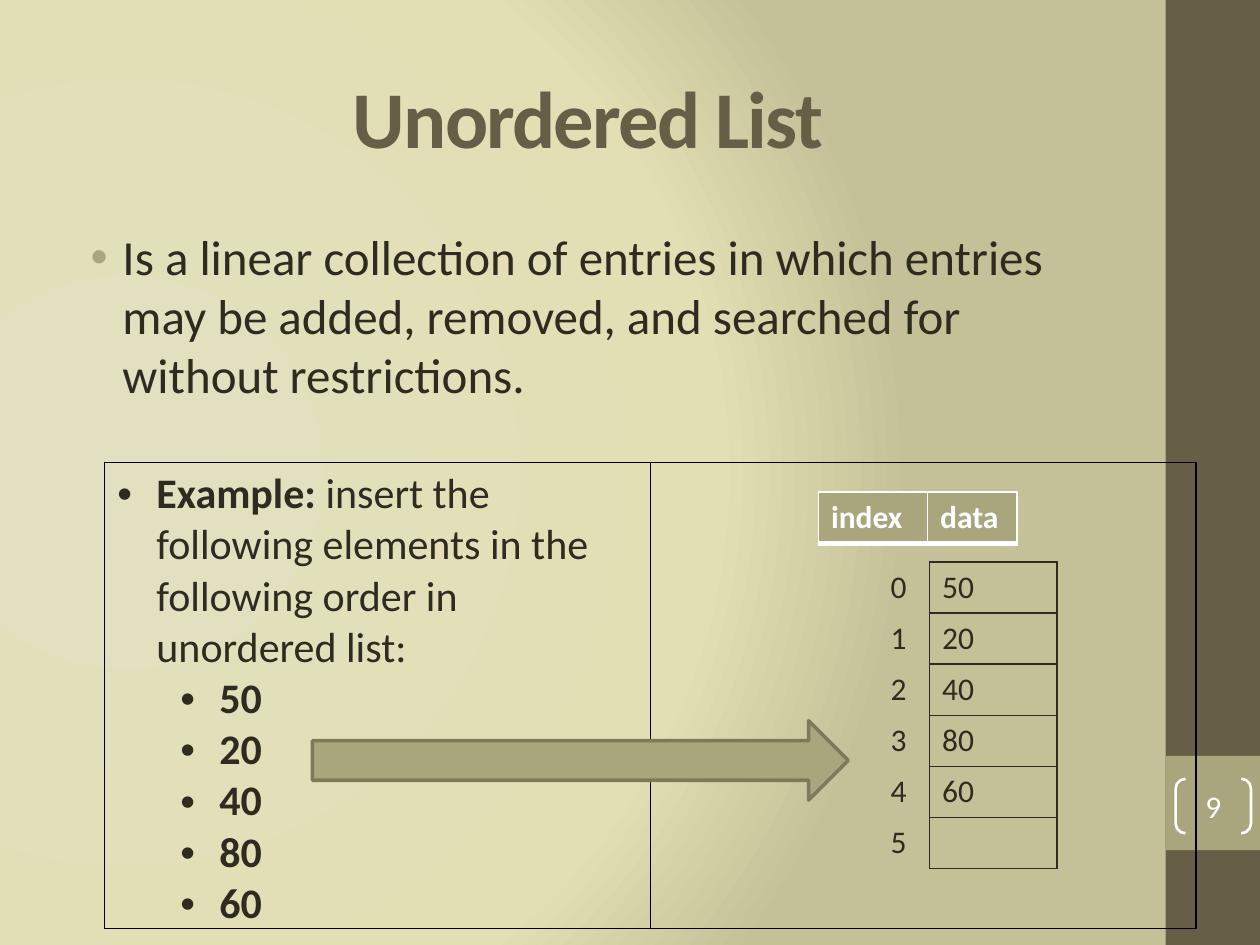
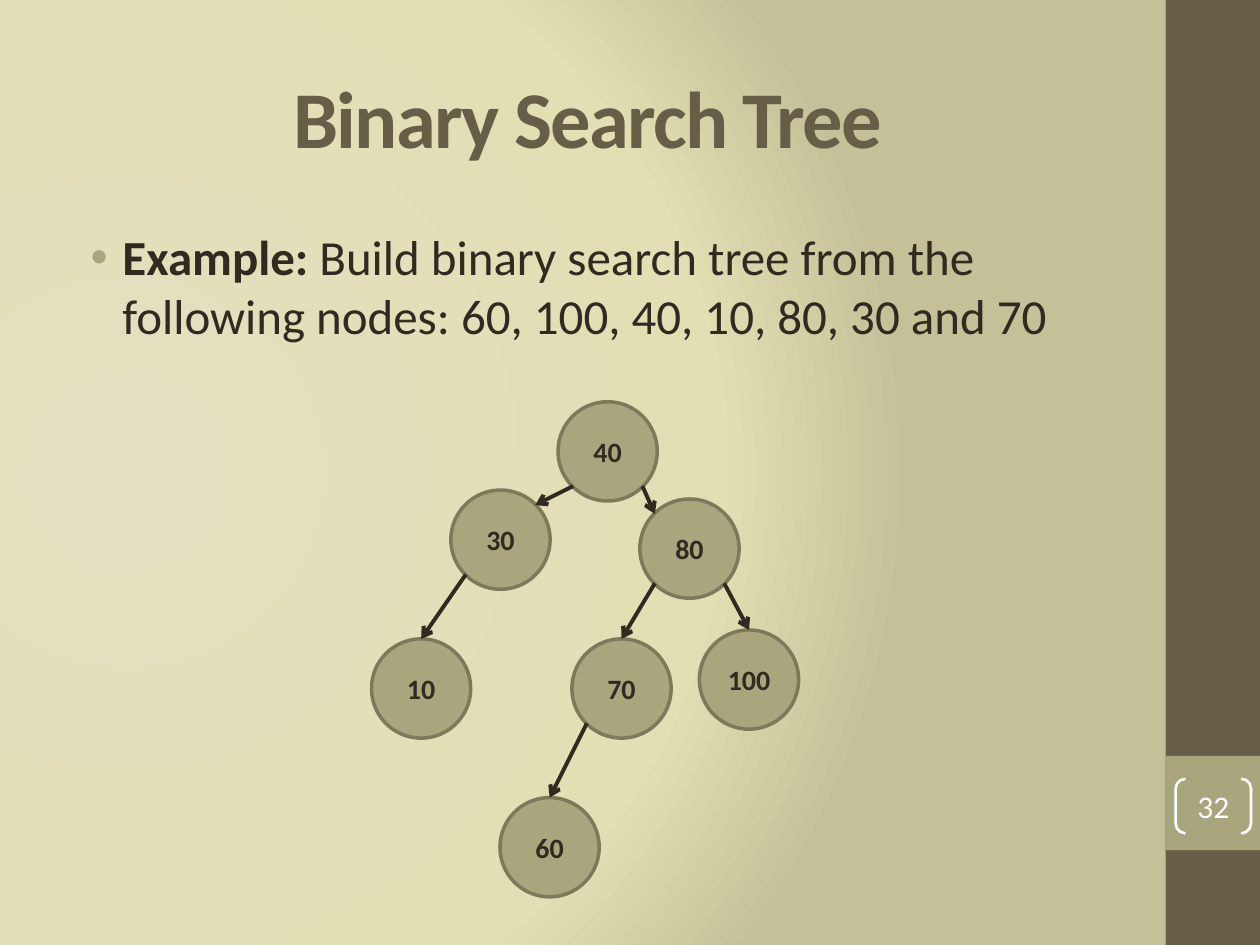
from dataclasses import dataclass

from lxml import etree
from pptx import Presentation
from pptx.dml.color import RGBColor
from pptx.enum.shapes import MSO_CONNECTOR, MSO_SHAPE
from pptx.enum.text import MSO_ANCHOR, PP_ALIGN
from pptx.oxml import parse_xml
from pptx.oxml.ns import nsdecls, qn
from pptx.util import Cm, Pt

ORDERED_VALUES = ["50", "20", "40", "80", "60"]

LIST_SLIDE = {
    "title": "Unordered List",
    "number": "9",
    "body": [("Is a linear collection of entries in which entries may be added, "
              "removed, and searched for without restrictions.", False)],
    "example": [("Example: ", True),
                ("insert the following elements in the following order "
                 "in unordered list:", False)],
    "headings": ["index", "data"],
    "slots": [[str(index), value] for index, value in enumerate(ORDERED_VALUES + [""])],
}

TREE_SLIDE = {
    "title": "Binary Search Tree",
    "number": "32",
    "body": [("Example:", True),
             (" Build binary search tree from the following nodes: "
              "60, 100, 40, 10, 80, 30 and 70", False)],
    "nodes": {
        "40": (11.25, 8.1),
        "30": (9.09, 9.88),
        "10": (7.49, 12.88),
        "70": (11.53, 12.88),
        "60": (10.08, 16.08),
        "80": (12.9, 10.06),
        "100": (14.1, 12.7),
    },
    "edges": [
        ("40", "bottom left", "30", "top right"),
        ("40", "bottom right", "80", "top left"),
        ("30", "bottom left", "10", "top"),
        ("80", "bottom right", "100", "top"),
        ("80", "bottom left", "70", "top"),
        ("70", "bottom left", "60", "top"),
    ],
}


@dataclass(frozen=True)
class Theme:
    font: str = "Calibri"
    dark: str = "675E47"
    accent: str = "A9A57C"
    outline: str = "7D7A5C"
    ink: str = "2F2B20"
    white: str = "FFFFFF"
    black: str = "000000"
    gradient: tuple = ((0, "E2E0C0"), (75, "E2DFB4"), (100, "C4C198"))
    title_size: int = 46
    body_size: int = 28
    example_size: int = 24
    label_size: int = 18
    node_size: int = 16


THEME = Theme()
WIDTH, HEIGHT = 25.4, 19.05
BAND_LEFT, BAND_WIDTH = 23.5, 1.9
NODE_SIZE = 2.0
NEAR, FAR = 0.15, 0.85
SITES = {
    "top": (0.5, 0),
    "top left": (NEAR, NEAR),
    "top right": (FAR, NEAR),
    "bottom left": (NEAR, FAR),
    "bottom right": (FAR, FAR),
}


def cm(*lengths):
    return [Cm(length) for length in lengths]


def add_text(frame, text, size, color=THEME.ink, bold=False, align=None,
             indent=None, hanging=0, bullet_color=None, spacing=None):
    paragraph = frame.paragraphs[0]
    if paragraph.runs:
        paragraph = frame.add_paragraph()
    if align is not None:
        paragraph.alignment = align
    if indent is not None:
        properties = paragraph._p.get_or_add_pPr()
        properties.set("marL", str(Cm(indent)))
        properties.set("indent", str(-Cm(hanging)))
        bullet = etree.SubElement(properties, qn("a:buClr"))
        etree.SubElement(bullet, qn("a:srgbClr"), val=bullet_color or color)
        etree.SubElement(properties, qn("a:buFont"), typeface="Arial")
        etree.SubElement(properties, qn("a:buChar"), char="•")
    runs = [(text, bold)] if isinstance(text, str) else text
    for words, is_bold in runs:
        run = paragraph.add_run()
        run.text = words
        run.font.name = THEME.font
        run.font.size = Pt(size)
        run.font.bold = is_bold
        run.font.color.rgb = RGBColor.from_string(color)
        if spacing is not None:
            run._r.get_or_add_rPr().set("spc", str(spacing))


def add_box(slide, kind, box, fill=None, line=None, line_width=2):
    shape = slide.shapes.add_shape(kind, *cm(*box))
    shape.shadow.inherit = False
    if fill:
        shape.fill.solid()
        shape.fill.fore_color.rgb = RGBColor.from_string(fill)
    else:
        shape.fill.background()
    if line:
        shape.line.color.rgb = RGBColor.from_string(line)
        shape.line.width = Pt(line_width)
    else:
        shape.line.fill.background()
    shape.text_frame.vertical_anchor = MSO_ANCHOR.MIDDLE
    return shape


def set_cell(cell, fill=None, **borders):
    if fill:
        cell.fill.solid()
        cell.fill.fore_color.rgb = RGBColor.from_string(fill)
    else:
        cell.fill.background()
    properties = cell._tc.get_or_add_tcPr()
    for position, side in enumerate("LRTB"):
        color, width = borders.get(side, (None, 0))
        line = etree.Element(qn(f"a:ln{side}"), w=str(Pt(width)))
        if color:
            solid = etree.SubElement(line, qn("a:solidFill"))
            etree.SubElement(solid, qn("a:srgbClr"), val=color)
        else:
            etree.SubElement(line, qn("a:noFill"))
        properties.insert(position, line)


def add_grid(slide, left, top, column_widths, row_height, row_count=1):
    frame = slide.shapes.add_table(
        row_count, len(column_widths),
        *cm(left, top, sum(column_widths), row_height * row_count))
    table = frame.table
    table.first_row = table.horz_banding = False
    for column, width in zip(table.columns, column_widths):
        column.width = Cm(width)
    for row in table.rows:
        row.height = Cm(row_height)
    return table


def set_background(presentation):
    master = presentation.slide_master
    master.background.fill.solid()
    stops = "".join(
        f'<a:gs pos="{position * 1000}"><a:srgbClr val="{color}"/></a:gs>'
        for position, color in THEME.gradient)
    gradient = parse_xml(
        f'<a:gradFill {nsdecls("a")} rotWithShape="1"><a:gsLst>{stops}</a:gsLst>'
        '<a:path path="circle"><a:fillToRect l="20000" t="50000" r="100000" b="50000"/>'
        '</a:path></a:gradFill>')
    properties = master.element.find(".//" + qn("p:bgPr"))
    properties.replace(properties.find(qn("a:solidFill")), gradient)


def start_slide(presentation, content):
    slide = presentation.slides.add_slide(presentation.slide_layouts[5])
    add_box(slide, MSO_SHAPE.RECTANGLE, (BAND_LEFT, 0, BAND_WIDTH, HEIGHT), THEME.dark)
    add_box(slide, MSO_SHAPE.RECTANGLE, (BAND_LEFT, 15.24, BAND_WIDTH, BAND_WIDTH),
            THEME.accent)

    title = slide.shapes.title
    title.left, title.top, title.width, title.height = cm(1.27, 0.76, 21.16, 3.18)
    title.text_frame.vertical_anchor = MSO_ANCHOR.MIDDLE
    add_text(title.text_frame, content["title"], THEME.title_size, color=THEME.dark,
             bold=True, align=PP_ALIGN.CENTER, spacing=-100)

    body = slide.shapes.add_textbox(*cm(1.27, 4.45, 21.16, 13.34)).text_frame
    body.word_wrap = True
    add_text(body, content["body"], THEME.body_size, indent=0.95, hanging=0.64,
             bullet_color=THEME.accent)

    number = add_box(slide, MSO_SHAPE.DOUBLE_BRACKET, (23.7, 15.7, 1.52, 1.1),
                     line=THEME.white, line_width=1.5)
    number.adjustments[0] = 0.18
    frame = number.text_frame
    frame.margin_left = frame.margin_right = frame.margin_top = frame.margin_bottom = 0
    add_text(frame, content["number"], THEME.label_size, color=THEME.white,
             align=PP_ALIGN.CENTER)
    return slide


def build_list_slide(presentation, content):
    slide = start_slide(presentation, content)

    panel = add_grid(slide, 2.11, 9.32, [11, 11], 9.4)
    for cell in panel.iter_cells():
        set_cell(cell, **dict.fromkeys("LRTB", (THEME.black, 1)))
    example = panel.cell(0, 0).text_frame
    add_text(example, content["example"], THEME.example_size, indent=0.79, hanging=0.79)
    for value in ORDERED_VALUES:
        add_text(example, value, THEME.example_size, bold=True, indent=2.06, hanging=0.79)

    slots = content["slots"]
    array = add_grid(slide, 17.7, 11.33, [1.04, 2.57], 1.03, len(slots))
    edge = (THEME.ink, 1)
    for row, values in enumerate(slots):
        set_cell(array.cell(row, 0), R=edge)
        set_cell(array.cell(row, 1), **dict.fromkeys("LRTB", edge))
        for column, value in enumerate(values):
            if value:
                add_text(array.cell(row, column).text_frame, value, THEME.label_size)

    header = add_grid(slide, 16.5, 9.92, [2.2, 1.8], 1.03)
    rule = (THEME.white, 1)
    for cell, heading in zip(header.iter_cells(), content["headings"]):
        set_cell(cell, THEME.accent, L=rule, R=rule, T=rule, B=(THEME.white, 3))
        add_text(cell.text_frame, heading, THEME.label_size, color=THEME.white, bold=True)

    add_box(slide, MSO_SHAPE.RIGHT_ARROW, (6.3, 14.53, 10.8, 1.6),
            THEME.accent, THEME.outline)


def site_point(corner, site):
    return [start + NODE_SIZE * share for start, share in zip(corner, SITES[site])]


def add_arrow(slide, start, end):
    connector = slide.shapes.add_connector(MSO_CONNECTOR.STRAIGHT, *cm(*start, *end))
    connector.line.color.rgb = RGBColor.from_string(THEME.ink)
    connector.line.width = Pt(2.25)
    etree.SubElement(connector.line._get_or_add_ln(), qn("a:tailEnd"), type="arrow")
    etree.SubElement(connector._element.spPr, qn("a:effectLst"))


def build_tree_slide(presentation, content):
    slide = start_slide(presentation, content)
    nodes = content["nodes"]
    for label, corner in nodes.items():
        node = add_box(slide, MSO_SHAPE.OVAL, (*corner, NODE_SIZE, NODE_SIZE),
                       THEME.accent, THEME.outline)
        node.text_frame.word_wrap = False
        add_text(node.text_frame, label, THEME.node_size, bold=True,
                 align=PP_ALIGN.CENTER)
    for parent, parent_site, child, child_site in content["edges"]:
        add_arrow(slide, site_point(nodes[parent], parent_site),
                  site_point(nodes[child], child_site))


def main():
    presentation = Presentation()
    presentation.slide_width, presentation.slide_height = cm(WIDTH, HEIGHT)
    set_background(presentation)
    build_list_slide(presentation, LIST_SLIDE)
    build_tree_slide(presentation, TREE_SLIDE)
    presentation.save("out.pptx")


if __name__ == "__main__":
    main()
